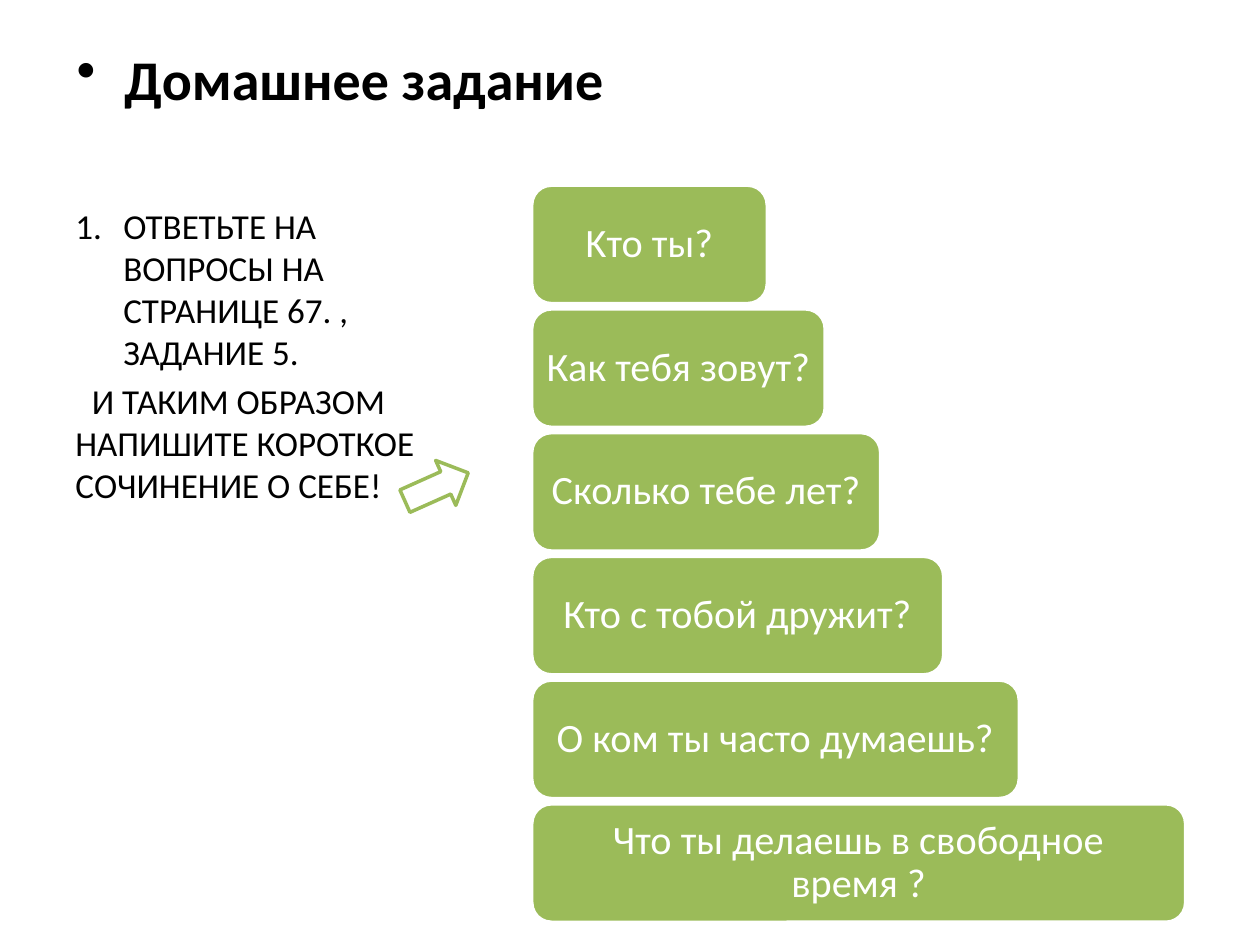
from dataclasses import dataclass

from lxml.etree import SubElement
from pptx import Presentation
from pptx.dml.color import RGBColor as RGB
from pptx.enum.shapes import MSO_SHAPE as Shape
from pptx.enum.text import MSO_ANCHOR as Anchor, PP_ALIGN as Align
from pptx.oxml.ns import qn
from pptx.util import Inches, Pt


@dataclass(frozen=True)
class Theme:
    font: str = "Calibri"
    ink: RGB = RGB(0, 0, 0)
    paper: RGB = RGB(255, 255, 255)
    green: RGB = RGB(0x9B, 0xBB, 0x59)
    title: int = 32
    body: int = 20
    step: int = 23
    line: int = 2


THEME = Theme()
QUESTIONS = [
    ("Kто ты?", 1.87),
    ("Как тебя зовут?", 2.33),
    ("Сколько тебе лет?", 2.77),
    ("Кто с тобой дружит?", 3.27),
    ("О ком ты часто думаешь?", 3.87),
    ("Что ты делаешь в свободное время ?", 5.19),
]


def write(para, text, size, color=THEME.ink, bold=False, align=Align.LEFT,
          left=0, first=0, before=0, spacing=1.0, bullet=None):
    """Fill a paragraph; bullet is a (tag, attributes) pair."""
    para.alignment = align
    para.line_spacing = spacing
    para.space_before = Pt(before)
    props = para._p.get_or_add_pPr()
    props.set("marL", str(Inches(left)))
    props.set("indent", str(Inches(first)))
    if bullet:
        tag, attrs = bullet
        SubElement(props, qn(tag), attrs)
    run = para.add_run()
    run.text = text
    font = run.font
    font.name, font.size, font.bold = THEME.font, Pt(size), bold
    font.color.rgb = color


def add_box(slide, left, top, width, height):
    box = slide.shapes.add_textbox(
        Inches(left), Inches(top), Inches(width), Inches(height))
    box.text_frame.word_wrap = True
    return box.text_frame


def add_block(slide, kind, left, top, width, height, fill, line):
    block = slide.shapes.add_shape(
        kind, Inches(left), Inches(top), Inches(width), Inches(height))
    block.shadow.inherit = False
    block.fill.solid()
    block.fill.fore_color.rgb = fill
    block.line.color.rgb = line
    block.line.width = Pt(THEME.line)
    return block


def add_steps(slide, left=4.22, top=1.47, height=0.94, pitch=0.982):
    for row, (text, width) in enumerate(QUESTIONS):
        step = add_block(slide, Shape.ROUNDED_RECTANGLE, left,
                         top + row * pitch, width, height,
                         THEME.green, THEME.paper)
        frame = step.text_frame
        frame.word_wrap = True
        frame.vertical_anchor = Anchor.MIDDLE
        frame.margin_left = frame.margin_right = Inches(0.05)
        frame.margin_top = frame.margin_bottom = 0
        write(frame.paragraphs[0], text, THEME.step, color=THEME.paper,
              align=Align.CENTER, spacing=0.9)


def main():
    deck = Presentation()
    deck.slide_width, deck.slide_height = Inches(10), Inches(7.5)
    slide = deck.slides.add_slide(deck.slide_layouts[6])

    title = add_box(slide, 0.51, 0.3, 7.56, 0.95)
    write(title.paragraphs[0], "Домашнее задание", THEME.title, bold=True,
          left=0.38, first=-0.38, bullet=("a:buChar", {"char": "•"}))

    add_steps(slide)

    task = add_box(slide, 0.5, 1.57, 3.29, 5.13)
    write(task.paragraphs[0],
          "ОТВЕТЬТЕ НА ВОПРОСЫ НА СТРАНИЦЕ 67. , ЗАДАНИЕ 5.", THEME.body,
          left=0.38, first=-0.38,
          bullet=("a:buAutoNum", {"type": "arabicPeriod"}))
    write(task.add_paragraph(),
          "И ТАКИМ ОБРАЗОМ НАПИШИТЕ КОРОТКОЕ СОЧИНЕНИЕ О СЕБЕ!", THEME.body,
          first=0.13, before=4)

    arrow = add_block(slide, Shape.RIGHT_ARROW, 3.19, 3.67, 0.55, 0.39,
                      THEME.paper, THEME.green)
    arrow.rotation = 335.9

    deck.save("out.pptx")


if __name__ == "__main__":
    main()
